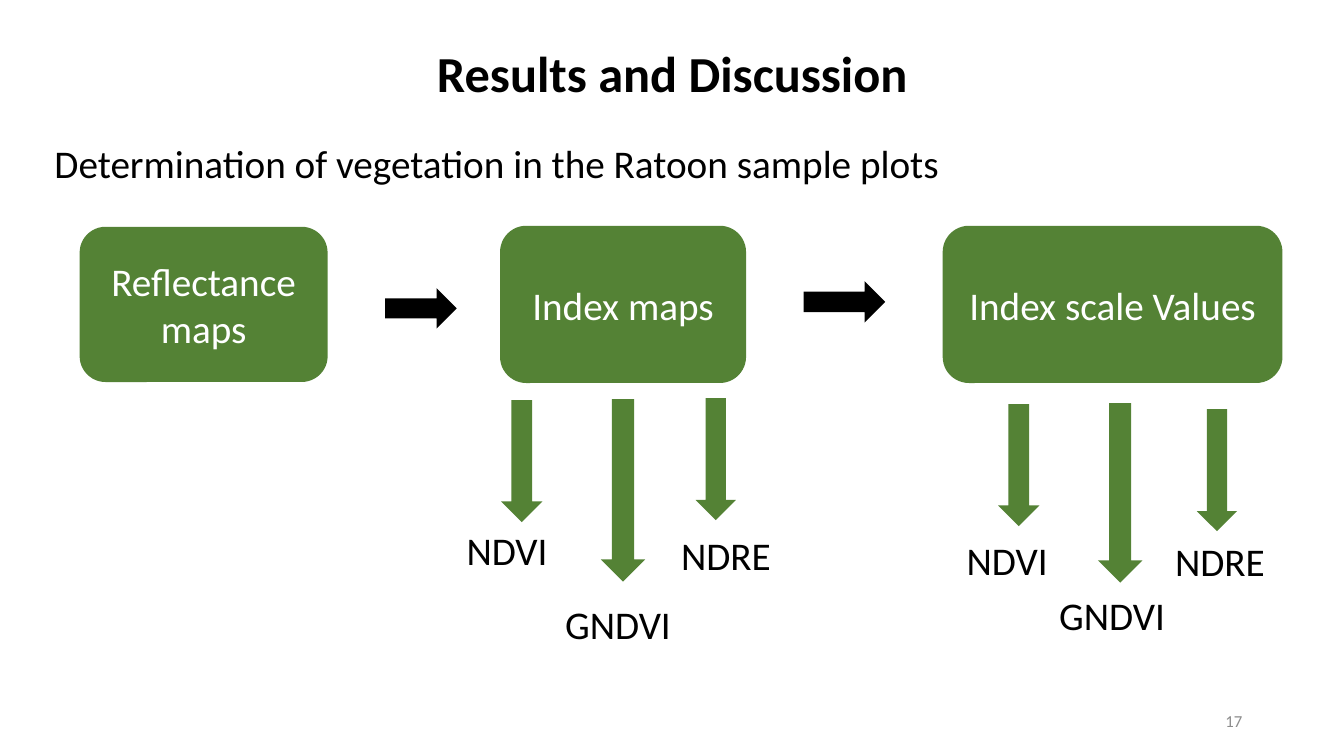
import pptx
import pptx.util
import pptx.dml.color
import pptx.enum.shapes
import pptx.enum.text
import lxml.etree

Inches = pptx.util.Inches
SHAPE = pptx.enum.shapes.MSO_SHAPE
ALIGN = pptx.enum.text.PP_ALIGN
ANCHOR = pptx.enum.text.MSO_ANCHOR

# Content: places are left, top, width, height in inches
COLORS = {"green": "548235", "black": "000000", "white": "FFFFFF", "gray": "8C8C8C"}
FONT = "Calibri"
TITLE = ("Results and Discussion", (0.92, 0.4, 11.5, 0.71))
INTRO = ("Determination of vegetation in the Ratoon sample plots", (0.44, 1.38, 11.97, 5.38))
PAGE_NUMBER = ("17", (9.42, 6.95, 3, 0.4))
STEPS = [
    ("Reflectance maps", (0.79, 2.25, 2.46, 1.54)),
    ("Index maps", (4.96, 2.24, 2.44, 1.56)),
    ("Index scale Values", (9.35, 2.24, 3.37, 1.56)),
]
STEP_ARROWS = [(3.82, 2.86, 0.71, 0.4), (7.97, 2.79, 0.81, 0.41)]
# Each index: name, place of its arrow, left and top of its label
INDICES = [
    ("NDVI", (4.97, 3.97, 0.41, 1.21), (4.31, 5.17)),
    ("GNDVI", (5.96, 3.96, 0.44, 1.81), (5.41, 5.91)),
    ("NDRE", (6.9, 3.95, 0.4, 1.21), (6.48, 5.22)),
    ("NDVI", (9.9, 4.01, 0.41, 1.21), (9.27, 5.27)),
    ("GNDVI", (10.89, 4, 0.44, 1.78), (10.31, 5.82)),
    ("NDRE", (11.87, 4.06, 0.4, 1.21), (11.38, 5.28)),
]
LABEL_SIZE = (1.44, 0.57)


def write(box, text, size, color, align, anchor=ANCHOR.TOP, bold=False):
    frame = box.text_frame
    frame.text = text
    frame.word_wrap = True
    frame.auto_size = pptx.enum.text.MSO_AUTO_SIZE.NONE
    frame.vertical_anchor = anchor
    para = frame.paragraphs[0]
    para.alignment = align
    para.space_before = pptx.util.Pt(0)
    para.font.name = FONT
    para.font.size = pptx.util.Pt(size)
    para.font.bold = bold
    para.font.color.rgb = pptx.dml.color.RGBColor.from_string(COLORS[color])
    return para


def place(box, area):
    box.left, box.top, box.width, box.height = map(Inches, area)


def add_block(page, kind, area, color):
    block = page.shapes.add_shape(kind, *map(Inches, area))
    block.shadow.inherit = False
    block.fill.solid()
    block.fill.fore_color.rgb = pptx.dml.color.RGBColor.from_string(COLORS[color])
    block.line.fill.background()
    return block


def add_label(page, area, *style):
    return write(page.shapes.add_textbox(*map(Inches, area)), *style)


def main():
    deck = pptx.Presentation()
    deck.slide_width, deck.slide_height = Inches(13.33), Inches(7.5)
    page = deck.slides.add_slide(deck.slide_layouts[1])

    # Title and introduction
    title, body = page.shapes.title, page.placeholders[1]
    place(title, TITLE[1])
    para = write(title, TITLE[0], 36, "black", ALIGN.CENTER, ANCHOR.MIDDLE, True)
    para.line_spacing = 0.9
    place(body, INTRO[1])
    body.text_frame.text = INTRO[0]
    para = write(body, INTRO[0], 28, "black", ALIGN.LEFT)
    para.line_spacing = 0.9
    properties = para._p.get_or_add_pPr()
    properties.set("marL", "0")
    properties.set("indent", "0")
    no_bullet = lxml.etree.Element(pptx.oxml.ns.qn("a:buNone"))
    properties.find(pptx.oxml.ns.qn("a:defRPr")).addprevious(no_bullet)

    # Page number
    add_label(page, PAGE_NUMBER[1], PAGE_NUMBER[0], 12, "gray", ALIGN.RIGHT, ANCHOR.MIDDLE)

    # Steps and the arrows between them
    for text, area in STEPS:
        step = add_block(page, SHAPE.ROUNDED_RECTANGLE, area, "green")
        write(step, text, 28, "white", ALIGN.CENTER, ANCHOR.MIDDLE)
    for area in STEP_ARROWS:
        add_block(page, SHAPE.RIGHT_ARROW, area, "black")

    # Vegetation indices below the steps
    for name, arrow_area, corner in INDICES:
        add_block(page, SHAPE.DOWN_ARROW, arrow_area, "green")
        add_label(page, corner + LABEL_SIZE, name, 28, "black", ALIGN.CENTER)

    deck.save("out.pptx")


if __name__ == "__main__":
    main()
